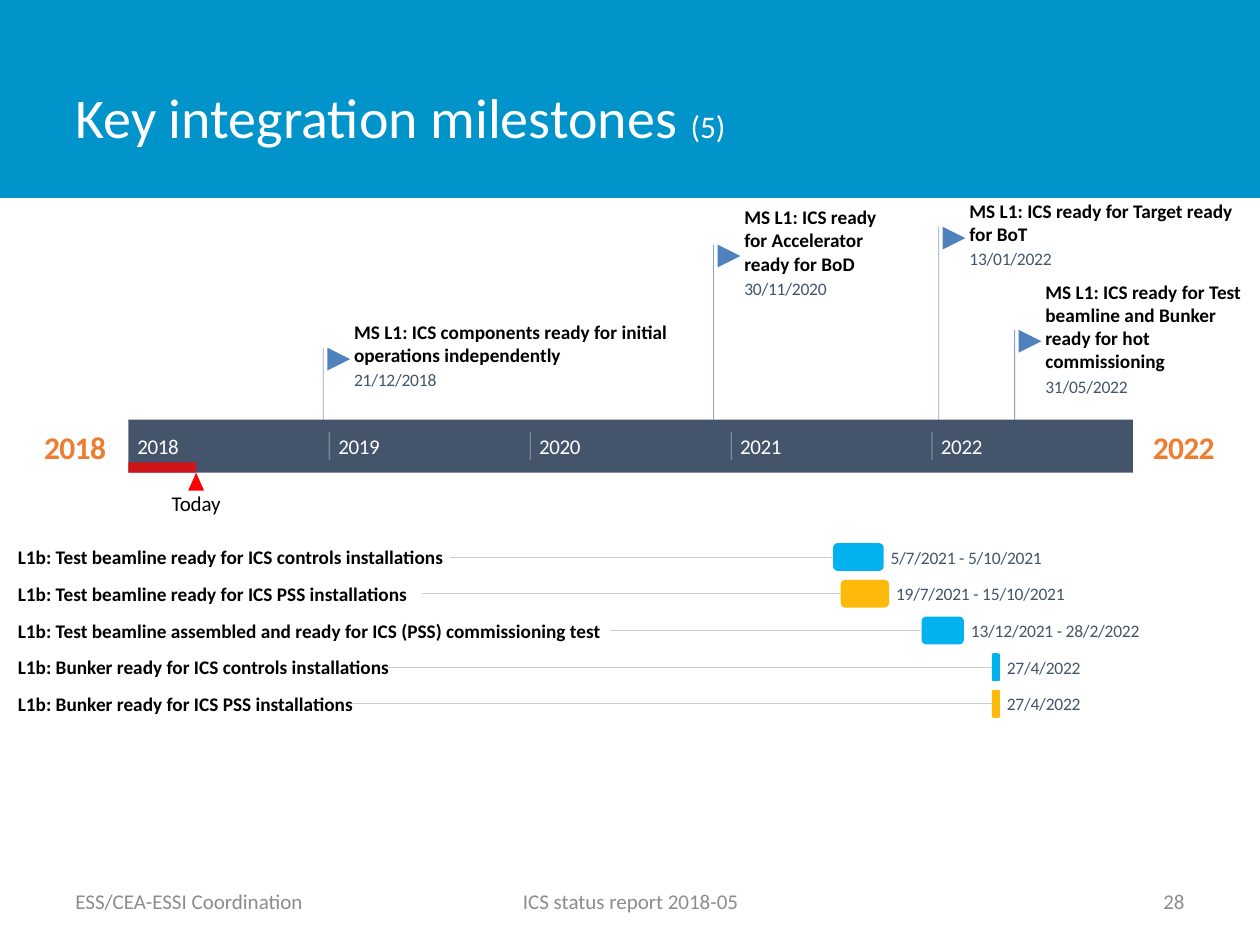
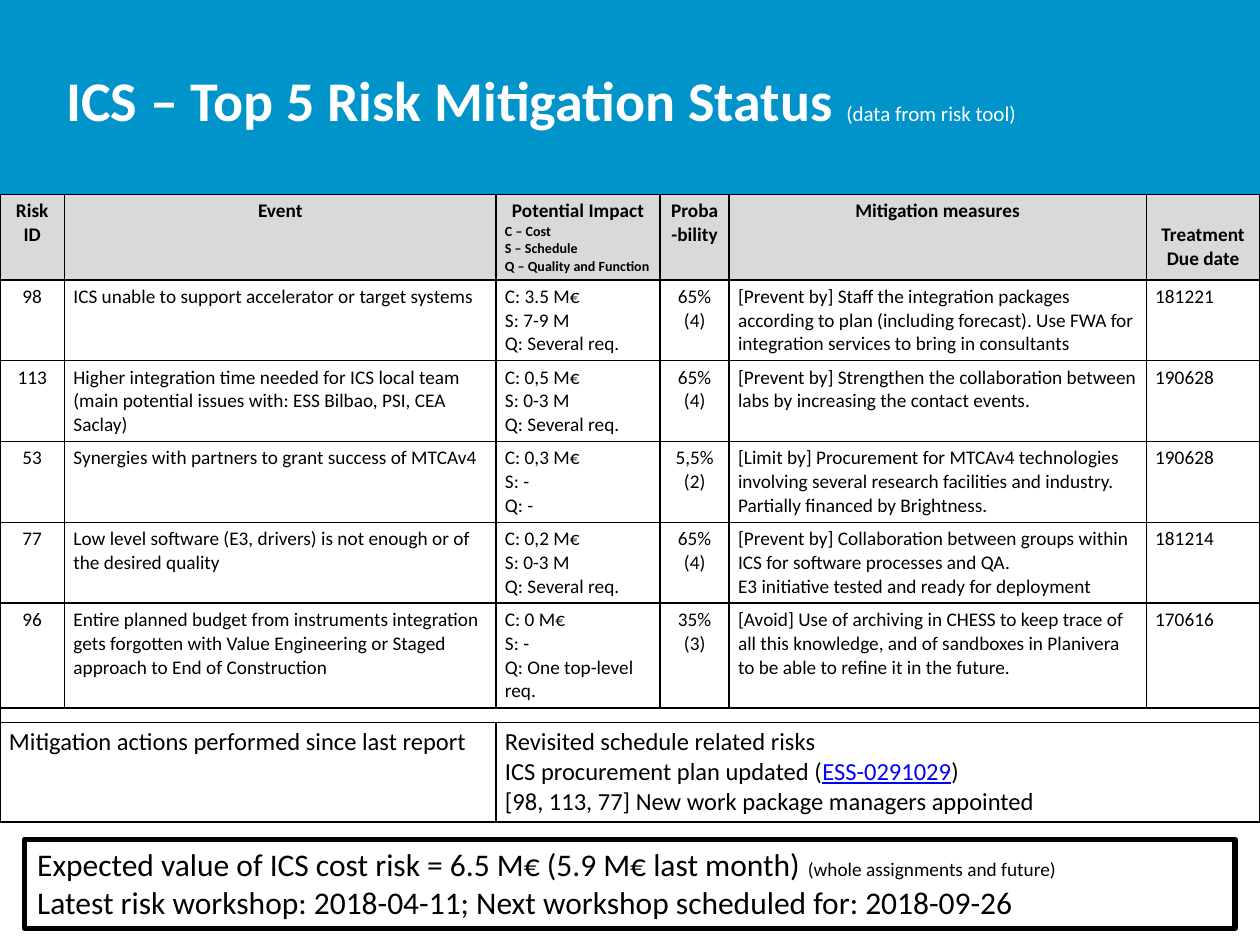
import pptx
import pptx.dml.color
import pptx.enum.shapes
import pptx.enum.text
import pptx.oxml.ns
import pptx.util
from lxml import etree
from pptx.util import Cm

SHAPE = pptx.enum.shapes.MSO_SHAPE
ALIGN = pptx.enum.text.PP_ALIGN
ANCHOR = pptx.enum.text.MSO_ANCHOR
qn = pptx.oxml.ns.qn

FONT = "Calibri"
COLOURS = {
    "band": "0094CA", "white": "FFFFFF", "black": "000000", "footer": "8C8C8C",
    "slate": "44546A", "orange": "ED7D31", "red": "FF0000", "flag": "4F81BD",
    "stem": "1F497E", "rule": "CCCCCC", "controls": "02B2EE", "pss": "FEBA0A",
    "header": "D9D9D9", "link": "0000FF",
}
SLIDE_WIDTH, SLIDE_HEIGHT = 25.4, 19.05

# Timeline content: text, date, flag top, text top, text width, text lines
MILESTONES = [
    ("MS L1: ICS components ready for initial operations independently",
     "21/12/2018", 7.01, 6.45, 6.38, 2),
    ("MS L1: ICS ready for Accelerator ready for BoD",
     "30/11/2020", 4.93, 4.14, 2.74, 3),
    ("MS L1: ICS ready for Target ready for BoT",
     "13/01/2022", 4.57, 4.01, 5.38, 2),
    ("MS L1: ICS ready for Test beamline and Bunker ready for hot commissioning",
     "31/05/2022", 6.65, 5.64, 4.06, 4),
]
# Task content: text, dates, colour, start of the leader line
TASKS = [
    ("L1b: Test beamline ready for ICS controls installations",
     "5/7/2021 - 5/10/2021", "controls", 9.07),
    ("L1b: Test beamline ready for ICS PSS installations",
     "19/7/2021 - 15/10/2021", "pss", 8.51),
    ("L1b: Test beamline assembled and ready for ICS (PSS) commissioning test",
     "13/12/2021 - 28/2/2022", "controls", 12.29),
    ("L1b: Bunker ready for ICS controls installations", "27/4/2022", "controls", 7.82),
    ("L1b: Bunker ready for ICS PSS installations", "27/4/2022", "pss", 7.09),
]
TODAY = "4/5/2018"
YEARS = range(2018, 2023)
FOOTERS = [
    ("ESS/CEA-ESSI Coordination", 1.27, 5.92, ALIGN.LEFT),
    ("ICS status report 2018-05", 8.69, 8.05, ALIGN.CENTER),
    ("28", 18.21, 5.92, ALIGN.RIGHT),
]

# A paragraph is a string or a list of (text, format changes)
SMALL = {"size": 8, "align": ALIGN.LEFT}
RISK_HEADER = [
    ["Risk ID"], ["Event"],
    ["Potential Impact", [("C – Cost", SMALL)], [("S – Schedule", SMALL)],
     [("Q – Quality and Function", SMALL)]],
    ["Proba-bility"], ["Mitigation measures"], ["Treatment", "Due date"],
]
RISKS = [
    [["98"], ["ICS unable to support accelerator or target systems"],
     ["C: 3.5 M€", "S: 7-9 M", "Q: Several req."], ["65%", "(4)"],
     ["[Prevent by] Staff the integration packages according to plan (including "
      "forecast). Use FWA for integration services to bring in consultants"], ["181221"]],
    [["113"], ["Higher integration time needed for ICS local team (main potential "
               "issues with: ESS Bilbao, PSI, CEA Saclay)"],
     ["C: 0,5 M€", "S: 0-3 M", "Q: Several req."], ["65%", "(4)"],
     ["[Prevent by] Strengthen the collaboration between labs by increasing the "
      "contact events."], ["190628"]],
    [["53"], ["Synergies with partners to grant success of MTCAv4"],
     ["C: 0,3 M€", "S: -", "Q: -"], ["5,5%", "(2)"],
     ["[Limit by] Procurement for MTCAv4 technologies involving several research "
      "facilities and industry. Partially financed by Brightness."], ["190628"]],
    [["77"], ["Low level software (E3, drivers) is not enough or of the desired quality"],
     ["C: 0,2 M€", "S: 0-3 M", "Q: Several req."], ["65%", "(4)"],
     ["[Prevent by] Collaboration between groups within ICS for software processes "
      "and QA.", "E3 initiative tested and ready for deployment"], ["181214"]],
    [["96"], ["Entire planned budget from instruments integration gets forgotten with "
              "Value Engineering or Staged approach to End of Construction"],
     ["C: 0 M€", "S: -", "Q: One top-level req."], ["35%", "(3)"],
     ["[Avoid] Use of archiving in CHESS to keep trace of all this knowledge, and of "
      "sandboxes in Planivera to be able to refine it in the future."], ["170616"]],
]
ACTIONS_LABEL = ["Mitigation actions performed since last report"]
ACTIONS = [
    "Revisited schedule related risks",
    [("ICS procurement plan updated (", {}),
     ("ESS-0291029", {"colour": "link", "underline": True}), (")", {})],
    "[98, 113, 77] New work package managers appointed",
]
SUMMARY = [
    [("Expected value of ICS cost risk = 6.5 M€ (5.9 M€ last month) ", {}),
     ("(whole assignments and future)", {"size": 11})],
    "Latest risk workshop: 2018-04-11; Next workshop scheduled for: 2018-09-26",
]
COLUMN_WIDTHS = [1.3, 8.7, 3.31, 1.39, 8.41, 2.29]
ROW_HEIGHTS = [1.72, 1.63, 1.63, 1.63, 1.63, 2.11, 0.29, 2.01]
CENTRED_COLUMNS = (0, 3)

BAR_LEFT, BAR_TOP, BAR_HEIGHT, YEAR_WIDTH = 2.59, 8.46, 1.07, 4.05
BAR_WIDTH = YEAR_WIDTH * len(YEARS)
DAYS_BEFORE_MONTH = (0, 31, 59, 90, 120, 151, 181, 212, 243, 273, 304, 334)


def rgb(name):
    return pptx.dml.color.RGBColor.from_string(COLOURS[name])


def set_alpha(element, percent):
    """Make the solid colour inside an element partly transparent."""
    colour = element.find(".//" + qn("a:srgbClr"))
    etree.SubElement(colour, qn("a:alpha"), val=str(percent * 1000))


def write(frame, paragraphs, **base):
    for index, runs in enumerate(paragraphs):
        paragraph = frame.paragraphs[0] if index == 0 else frame.add_paragraph()
        if isinstance(runs, str):
            runs = [(runs, {})]
        for text, changes in runs:
            style = {**base, **changes}
            paragraph.alignment = style.get("align", ALIGN.LEFT)
            run = paragraph.add_run()
            run.text = text
            run.font.name = FONT
            run.font.size = pptx.util.Pt(style["size"])
            run.font.bold = style.get("bold", False)
            run.font.underline = style.get("underline", False)
            run.font.color.rgb = rgb(style.get("colour", "black"))
            if "spacing" in style:
                run._r.get_or_add_rPr().set("spc", str(style["spacing"]))


def add_text(slide, paragraphs, left, top, width, height, inset=False, wrap=True, **style):
    frame = slide.shapes.add_textbox(Cm(left), Cm(top), Cm(width), Cm(height)).text_frame
    frame.word_wrap = wrap
    frame.vertical_anchor = ANCHOR.MIDDLE
    if not inset:
        frame.margin_left = frame.margin_right = frame.margin_top = frame.margin_bottom = 0
    write(frame, paragraphs, **style)


def add_box(slide, kind, left, top, width, height, fill):
    shape = slide.shapes.add_shape(kind, Cm(left), Cm(top), Cm(width), Cm(height))
    shape.shadow.inherit = False
    shape.fill.solid()
    shape.fill.fore_color.rgb = rgb(fill)
    shape.line.fill.background()
    return shape


def add_line(slide, left, top, right, bottom, colour, width=0.5, alpha=None):
    line = slide.shapes.add_connector(pptx.enum.shapes.MSO_CONNECTOR.STRAIGHT,
                                      Cm(left), Cm(top), Cm(right), Cm(bottom))
    line.line.color.rgb = rgb(colour)
    line.line.width = pptx.util.Pt(width)
    etree.SubElement(line._element.spPr, qn("a:effectLst"))
    if alpha:
        set_alpha(line._element.spPr, alpha)
    return line


def add_titled_slide(presentation, title, left, top, height, bold=False):
    slide = presentation.slides.add_slide(presentation.slide_layouts[6])
    add_box(slide, SHAPE.RECTANGLE, 0, 0, SLIDE_WIDTH, 3.99, "band")
    add_text(slide, [title], left, top, 19.84, height, inset=True,
             size=32, bold=bold, colour="white")
    return slide


def date_x(date):
    """Horizontal place of a day/month/year date on the timeline."""
    day, month, year = map(int, date.split("/"))
    days = DAYS_BEFORE_MONTH[month - 1] + day - 1
    return BAR_LEFT + YEAR_WIDTH * (year - YEARS[0] + days / 365)


def draw_year_bar(slide):
    bar_right, bar_bottom = BAR_LEFT + BAR_WIDTH, BAR_TOP + BAR_HEIGHT
    add_box(slide, SHAPE.RECTANGLE, BAR_LEFT, BAR_TOP, BAR_WIDTH, BAR_HEIGHT, "slate")
    for year, left in ((YEARS[0], BAR_LEFT - 1.7), (YEARS[-1], bar_right + 0.4)):
        add_text(slide, [str(year)], left, 8.61, 1.25, 0.79, wrap=False, size=18,
                 bold=True, colour="orange", align=ALIGN.CENTER, spacing=-40)
    today = date_x(TODAY)
    elapsed = add_box(slide, SHAPE.RECTANGLE, BAR_LEFT, bar_bottom - 0.21,
                      today - BAR_LEFT, 0.21, "red")
    set_alpha(elapsed._element.spPr, 75)
    add_box(slide, SHAPE.ISOSCELES_TRIANGLE, today - 0.16, bar_bottom, 0.32, 0.36, "red")
    add_text(slide, ["Today"], today - 0.5, 9.88, 1, 0.51, wrap=False, size=12,
             align=ALIGN.CENTER, spacing=-10)
    for index, year in enumerate(YEARS):
        left = BAR_LEFT + index * YEAR_WIDTH
        if index:
            add_line(slide, left, 8.71, left, 9.27, "white", 0.75, alpha=30)
        add_text(slide, [str(year)], left + 0.18, 8.74, 0.84, 0.51, wrap=False,
                 size=12, colour="white", spacing=-20)


def draw_milestones(slide):
    for text, date, flag_top, text_top, width, lines in MILESTONES:
        stem = date_x(date)
        height = lines * 0.47
        add_line(slide, stem, flag_top, stem, BAR_TOP, "stem", alpha=50)
        flag = add_box(slide, SHAPE.FLOWCHART_MERGE, stem + 0.08, flag_top, 0.46, 0.46, "flag")
        flag.rotation = 270
        add_text(slide, [text], stem + 0.62, text_top, width, height, size=11, bold=True)
        add_text(slide, [date], stem + 0.62, text_top + height + 0.05, 1.9, 0.43,
                 size=10, colour="slate", spacing=-10)


def draw_tasks(slide):
    for index, (text, dates, colour, leader_start) in enumerate(TASKS):
        top = 10.95 + index * 0.74
        middle = top + 0.28
        days = dates.split(" - ")
        start, end = date_x(days[0]), date_x(days[-1])
        if start == end:
            start, end = start - 0.08, end + 0.08
        bar = add_box(slide, SHAPE.ROUNDED_RECTANGLE, start, top, end - start, 0.56, colour)
        leader = add_line(slide, leader_start, middle, start, middle, "rule")
        leader.end_connect(bar, 1)
        add_text(slide, [text], 0.36, middle - 0.24, 12, 0.48, size=11, bold=True)
        add_text(slide, [dates], end + 0.14, middle - 0.22, 3.7, 0.44,
                 size=10, colour="slate", spacing=-10)


def format_cell(cell, fill):
    properties = cell._tc.get_or_add_tcPr()
    for side in ("a:lnL", "a:lnR", "a:lnT", "a:lnB"):
        border = etree.SubElement(properties, qn(side), w=str(pptx.util.Pt(1)))
        solid = etree.SubElement(border, qn("a:solidFill"))
        etree.SubElement(solid, qn("a:srgbClr"), val=COLOURS["black"])
    if fill:
        cell.fill.solid()
        cell.fill.fore_color.rgb = rgb(fill)
    else:
        cell.fill.background()
    cell.margin_left = cell.margin_right = Cm(0.18)
    cell.margin_top = cell.margin_bottom = Cm(0.1)


def draw_risk_table(slide):
    table = slide.shapes.add_table(
        len(ROW_HEIGHTS), len(COLUMN_WIDTHS), Cm(0), Cm(3.92),
        Cm(SLIDE_WIDTH), Cm(sum(ROW_HEIGHTS))).table
    table.first_row = table.horz_banding = False
    for column, width in zip(table.columns, COLUMN_WIDTHS):
        column.width = Cm(width)
    for index, (row, height) in enumerate(zip(table.rows, ROW_HEIGHTS)):
        row.height = Cm(height)
        for cell in row.cells:
            format_cell(cell, None if index else "header")

    for row, cells in enumerate([RISK_HEADER] + RISKS):
        for column, paragraphs in enumerate(cells):
            centred = row == 0 or column in CENTRED_COLUMNS
            write(table.cell(row, column).text_frame, paragraphs, size=11, bold=row == 0,
                  align=ALIGN.CENTER if centred else ALIGN.LEFT)
    table.cell(0, 5).margin_top = Cm(0.58)

    gap_row, actions_row = len(RISKS) + 1, len(RISKS) + 2
    for cell in table.rows[gap_row].cells:
        cell.margin_top = cell.margin_bottom = 0
        etree.SubElement(cell.text_frame.paragraphs[0]._p, qn("a:endParaRPr"), sz="400")
    table.cell(gap_row, 0).merge(table.cell(gap_row, 5))
    for first, last, paragraphs in ((0, 1, ACTIONS_LABEL), (2, 5, ACTIONS)):
        cell = table.cell(actions_row, first)
        cell.merge(table.cell(actions_row, last))
        write(cell.text_frame, paragraphs, size=14)


def main():
    presentation = pptx.Presentation()
    presentation.slide_width, presentation.slide_height = Cm(SLIDE_WIDTH), Cm(SLIDE_HEIGHT)

    timeline = add_titled_slide(
        presentation, [("Key integration milestones ", {}), ("(5)", {"size": 18})],
        1.27, 0.76, 3.18)
    draw_year_bar(timeline)
    draw_milestones(timeline)
    draw_tasks(timeline)
    for text, left, width, align in FOOTERS:
        add_text(timeline, [text], left, 17.65, width, 1.02, inset=True,
                 size=12, colour="footer", align=align)

    risks = add_titled_slide(
        presentation, [("ICS – Top 5 Risk Mitigation Status ", {}),
                       ("(data from risk tool)", {"size": 12, "bold": False})],
        1.09, 0.53, 2.95, bold=True)
    draw_risk_table(risks)
    summary = add_box(risks, SHAPE.RECTANGLE, 0.5, 16.92, 24.4, 1.8, "white")
    summary.line.color.rgb = rgb("black")
    summary.line.width = pptx.util.Pt(3)
    summary.text_frame.word_wrap = True
    summary.text_frame.vertical_anchor = ANCHOR.TOP
    write(summary.text_frame, SUMMARY, size=18)

    presentation.save("out.pptx")


if __name__ == "__main__":
    main()
